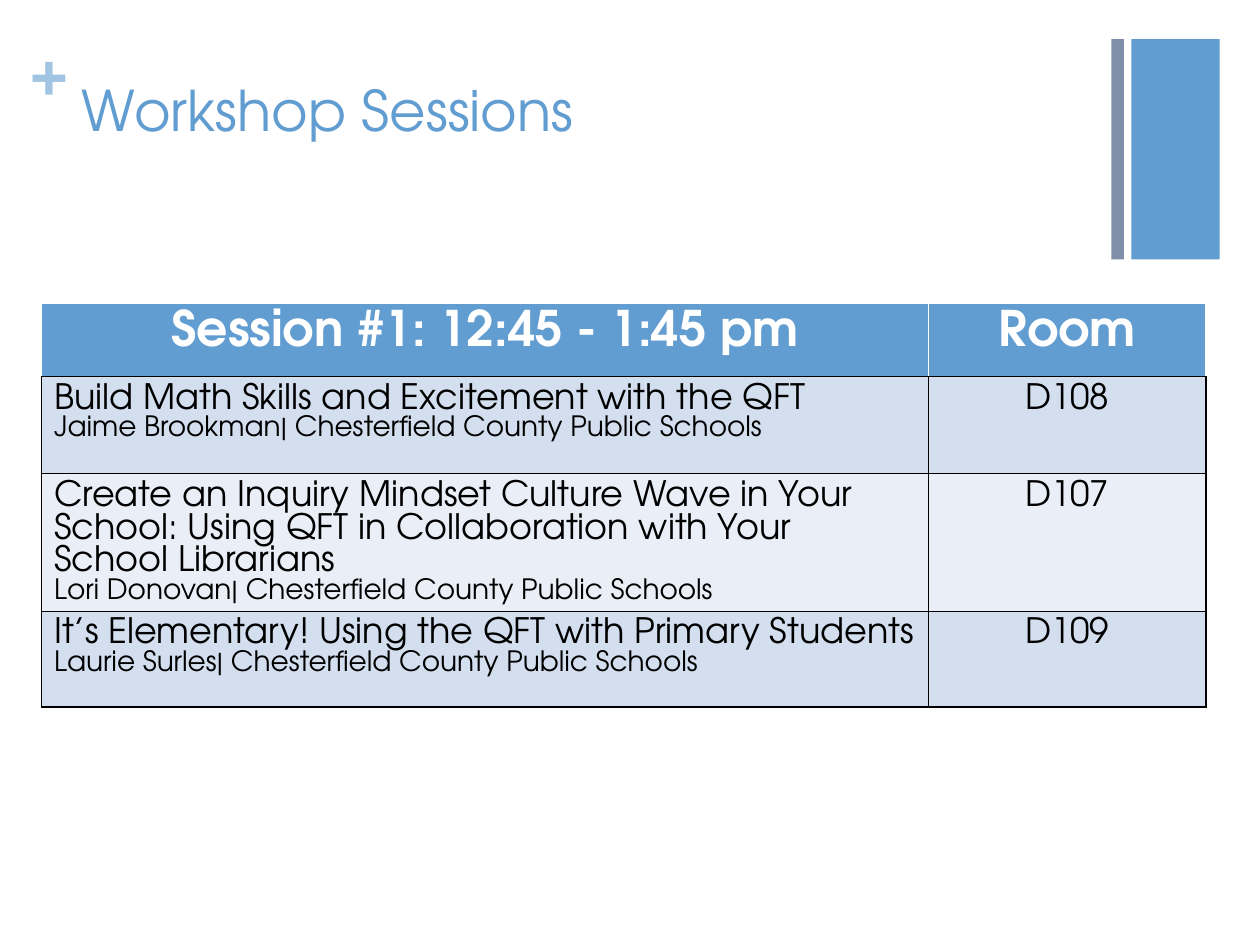
from lxml import etree
from pptx import Presentation
from pptx.dml.color import RGBColor
from pptx.enum.shapes import MSO_SHAPE
from pptx.enum.text import MSO_ANCHOR, PP_ALIGN
from pptx.oxml.ns import qn
from pptx.util import Inches, Pt

RECT = MSO_SHAPE.RECTANGLE
TOP = MSO_ANCHOR.TOP
LEFT, CENTER = PP_ALIGN.LEFT, PP_ALIGN.CENTER
FONT = "TeX Gyre Adventor"
BLUE, GRAY, WHITE, BLACK = "629DD1", "7F8FA9", "FFFFFF", "000000"
color = RGBColor.from_string


def style(para, size, hue, bold=False, align=LEFT, face=FONT):
    para.alignment = align
    for run in para.runs:
        font = run.font
        font.name, font.size, font.bold = face, Pt(size), bold
        font.color.rgb = color(hue)


def border(cell, hues):
    props = cell._tc.get_or_add_tcPr()
    for place, (side, hue) in enumerate(zip("LRTB", hues)):
        line = etree.Element(qn(f"a:ln{side}"), w=str(Pt(1)))
        fill = etree.SubElement(line, qn("a:solidFill"))
        etree.SubElement(fill, qn("a:srgbClr"), val=hue)
        props.insert(place, line)


deck = Presentation()
deck.slide_width, deck.slide_height = Inches(10), Inches(7.5)
slide = deck.slides.add_slide(deck.slide_layouts[5])
shapes = slide.shapes

# Corner bars
for left, width, hue in [(8.98, 0.7, BLUE), (8.82, 0.1, GRAY)]:
    bar = shapes.add_shape(RECT, Inches(left), Inches(0.31), Inches(width), Inches(1.75))
    bar.shadow.inherit = False
    bar.fill.solid()
    bar.fill.fore_color.rgb = color(hue)
    bar.line.fill.background()

# Plus sign
plus = shapes.add_textbox(Inches(0.24), Inches(0.25), Inches(0.29), Inches(0.61))
frame = plus.text_frame
frame.margin_left = frame.margin_right = frame.margin_top = frame.margin_bottom = 0
frame.text = "+"
style(frame.paragraphs[0], 36, "A1C4E3", True, face="TeX Gyre Bonum")

# Title
title = shapes.title
title.left, title.top = Inches(0.55), Inches(0.53)
title.width, title.height = Inches(8.26), Inches(1.22)
title.text_frame.text = "Workshop Sessions"
title.text_frame.vertical_anchor = TOP
para = title.text_frame.paragraphs[0]
para.line_spacing = Pt(40)
style(para, 32, BLUE)

# Session table: each cell is a list of lines
school = "Chesterfield County Public Schools"
rows = [
    (["Session #1: 12:45 - 1:45 pm"], ["Room"]),
    (["Build Math Skills and Excitement with the QFT",
      f"Jaime Brookman| {school}"], ["D108"]),
    (["Create an Inquiry Mindset Culture Wave in Your School: "
      "Using QFT in Collaboration with Your School Librarians",
      f"Lori Donovan| {school}"], ["D107"]),
    (["It’s Elementary! Using the QFT with Primary Students",
      f"Laurie Surles| {school}"], ["D109"]),
]
fills = [BLUE, "D3DFEE", "EAEFF7", "D3DFEE"]
tall = [0.58, 0.77, 1.08, 0.76]
wide = [7.04, 2.2]
table = shapes.add_table(len(rows), len(wide), Inches(0.33), Inches(2.41),
                         Inches(sum(wide)), Inches(sum(tall))).table
for col, width in zip(table.columns, wide):
    col.width = Inches(width)
for r, row in enumerate(rows):
    table.rows[r].height = Inches(tall[r])
    head = r == 0
    for c, lines in enumerate(row):
        cell = table.cell(r, c)
        cell.fill.solid()
        cell.fill.fore_color.rgb = color(fills[r])
        border(cell, [WHITE] * 3 + [BLACK] if head else [BLACK] * 4)
        cell.text_frame.text = "\n".join(lines)
        for n, para in enumerate(cell.text_frame.paragraphs):
            size = 28 if head else 16 if n else 20
            para.line_spacing = Pt(round(size * 0.94, 1))
            style(para, size, WHITE if head else BLACK, head,
                  CENTER if head or c else LEFT)

deck.save("out.pptx")
